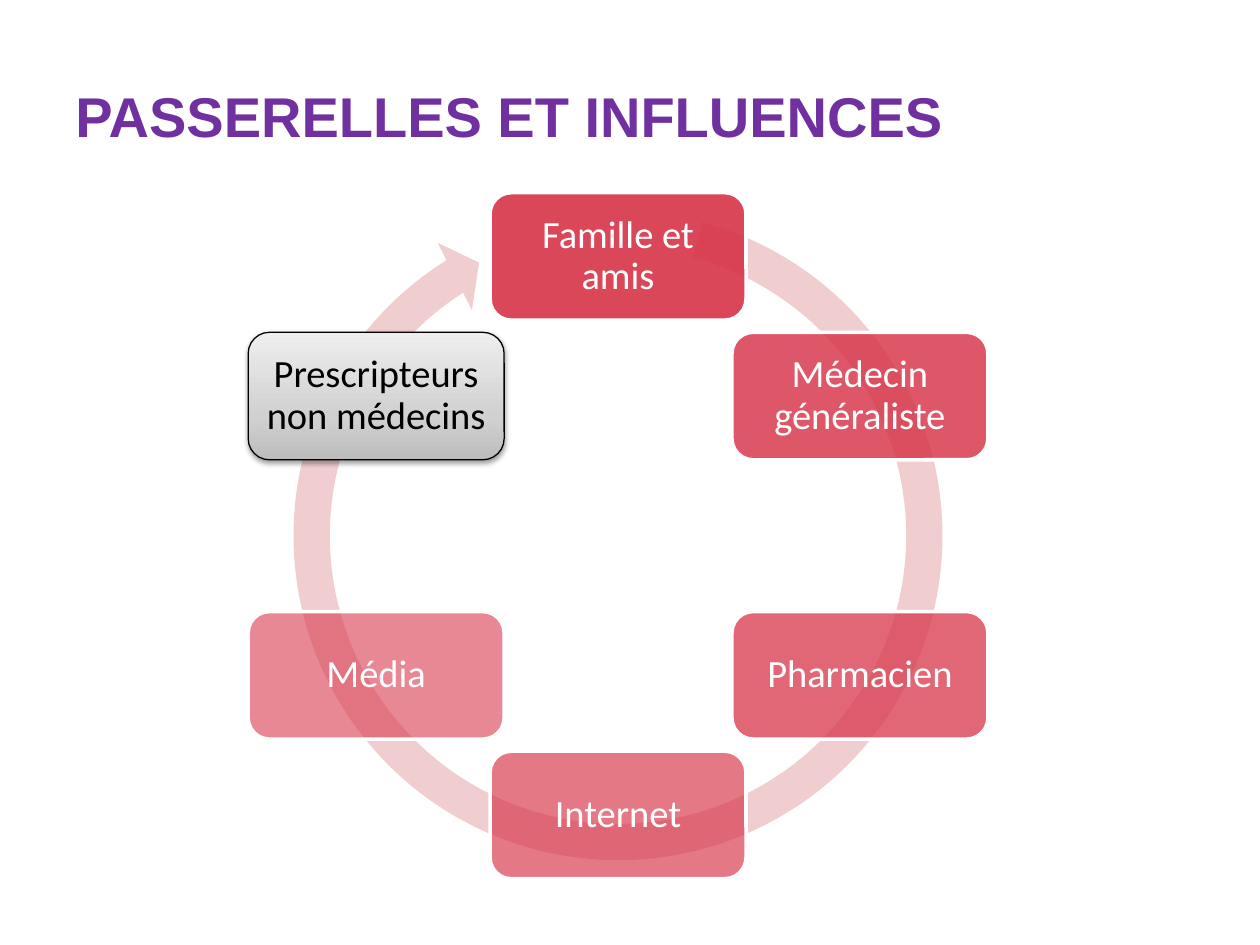
import copy
import math

import lxml.etree
import pptx
import pptx.dml.color
import pptx.enum.shapes
import pptx.enum.text
import pptx.oxml
import pptx.oxml.ns
import pptx.util

Cm = pptx.util.Cm
Pt = pptx.util.Pt
qn = pptx.oxml.ns.qn
SHAPE = pptx.enum.shapes.MSO_SHAPE
MIDDLE = pptx.enum.text.MSO_ANCHOR.MIDDLE

COLORS = {
    "title": "7030A0",
    "ring": "F0CECF",
    "step": "D73347",
    "white": "FFFFFF",
    "black": "000000",
}
GRADIENT = [(0, "BDBDBD"), (0.35, "D1D1D1"), (1, "EEEEEE")]
STEPS = [
    ("Famille et amis", 90),
    ("Médecin généraliste", 82),
    ("Pharmacien", 74),
    ("Internet", 66),
    ("Média", 58),
    ("Prescripteurs non médecins", None),
]
CENTER_X, CENTER_Y, RADIUS = 12.46, 10.8, 5.63
RING_SIZE = 13.87
STEP_WIDTH, STEP_HEIGHT = 5.16, 2.57


def rgb(value):
    return pptx.dml.color.RGBColor.from_string(value)


def format_text(paragraph, font_name, size, color):
    for span in paragraph.runs:
        span.font.name = font_name
        span.font.size = Pt(size)
        span.font.color.rgb = rgb(color)


deck = pptx.Presentation()
deck.slide_width = Cm(25.4)
deck.slide_height = Cm(19.05)
page = deck.slides.add_slide(deck.slide_layouts[6])

title = page.shapes.add_textbox(Cm(1.27), Cm(1.42), Cm(22.86), Cm(2.36))
title.text_frame.word_wrap = True
title.text_frame.vertical_anchor = MIDDLE
title.text_frame.text = "PASSERELLES ET INFLUENCES"
para = title.text_frame.paragraphs[0]
para.line_spacing = Pt(23)
format_text(para, "Arial", 32, COLORS["title"])
para.runs[0].font.bold = True

ring = page.shapes.add_shape(
    SHAPE.CIRCULAR_ARROW,
    Cm(CENTER_X - RING_SIZE / 2), Cm(CENTER_Y - RING_SIZE / 2),
    Cm(RING_SIZE), Cm(RING_SIZE),
)
for index, value in enumerate([0.05274, 3.1263, 142.688, 171.032, 0.05477]):
    ring.adjustments[index] = value
ring.shadow.inherit = False
ring.fill.solid()
ring.fill.fore_color.rgb = rgb(COLORS["ring"])
ring.line.fill.background()

for index, (label, opacity) in enumerate(STEPS):
    angle = math.radians(60 * index - 90)
    box = page.shapes.add_shape(
        SHAPE.ROUNDED_RECTANGLE,
        Cm(CENTER_X + RADIUS * math.cos(angle) - STEP_WIDTH / 2),
        Cm(CENTER_Y + RADIUS * math.sin(angle) - STEP_HEIGHT / 2),
        Cm(STEP_WIDTH), Cm(STEP_HEIGHT),
    )
    box.shadow.inherit = False
    properties = box._element.spPr
    if opacity is None:
        box.fill.gradient()
        box.fill.gradient_angle = 90
        stops = properties.find(".//" + qn("a:gsLst"))
        stops.insert(1, copy.deepcopy(stops[0]))
        for stop, (position, color) in zip(box.fill.gradient_stops, GRADIENT):
            stop.position = position
            stop.color.rgb = rgb(color)
        box.line.color.rgb = rgb(COLORS["black"])
        box.line.width = Pt(0.75)
        shadow = lxml.etree.SubElement(
            properties.find(qn("a:effectLst")), qn("a:outerShdw"),
            blurRad=str(Pt(3.1)), dist=str(Pt(1.6)), dir="5400000", rotWithShape="0",
        )
        tint = lxml.etree.SubElement(shadow, qn("a:srgbClr"), val=COLORS["black"])
        lxml.etree.SubElement(tint, qn("a:alpha"), val="38000")
        text_color = COLORS["black"]
    else:
        box.fill.solid()
        box.fill.fore_color.rgb = rgb(COLORS["step"])
        tint = properties.find(qn("a:solidFill")).find(qn("a:srgbClr"))
        lxml.etree.SubElement(tint, qn("a:alpha"), val=str(opacity * 1000))
        box.line.color.rgb = rgb(COLORS["white"])
        box.line.width = Pt(2)
        text_color = COLORS["white"]

    frame = box.text_frame
    frame.word_wrap = True
    frame.vertical_anchor = MIDDLE
    frame.margin_left = frame.margin_right = Cm(0.2)
    frame.margin_top = frame.margin_bottom = Cm(0.2)
    frame.text = label
    para = frame.paragraphs[0]
    para.alignment = pptx.enum.text.PP_ALIGN.CENTER
    para.line_spacing = 0.9
    format_text(para, "Calibri", 22, text_color)

deck.save("out.pptx")
